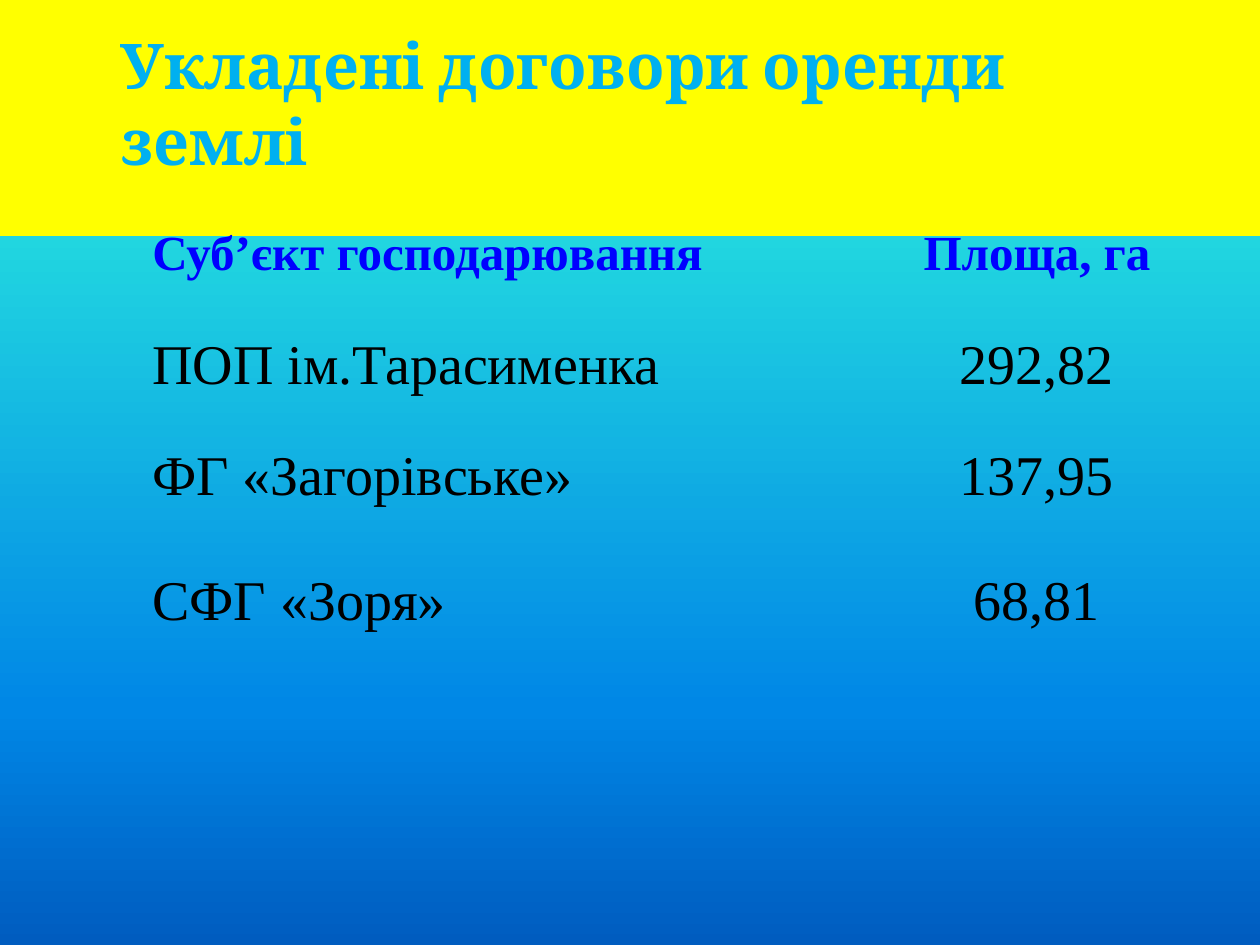
"""Build a slide with a table of signed land leases."""
from lxml import etree
from pptx import Presentation
from pptx import util as u
from pptx.dml.color import RGBColor
from pptx.enum import text
from pptx.oxml import ns

YELLOW = RGBColor(0xFF, 0xFF, 0x00)
AQUA = RGBColor(0x21, 0xD6, 0xE0)
AZURE = RGBColor(0x00, 0x87, 0xE6)
NAVY = RGBColor(0x00, 0x5C, 0xBF)
SKY = RGBColor(0x00, 0xB0, 0xF0)
BLUE = RGBColor(0x00, 0x00, 0xFF)
BLACK = RGBColor(0x00, 0x00, 0x00)

PLAIN = "{2D5ABB26-0587-4C30-8999-92F81FD0307C}"
TITLE = {"name": "Cambria", "size": u.Pt(36), "bold": True}
HEAD = {"name": "Times New Roman", "size": u.Pt(28), "bold": True}
BODY = {"name": "Times New Roman", "size": u.Pt(32), "bold": False}
INSET = {"margin_left": u.Cm(0.1), "margin_right": u.Cm(0.1),
         "margin_top": 0, "margin_bottom": 0}
WIDTHS = (15.04, 5.79)
HEIGHTS = (2.18, 2.24, 2.51, 3.25)
LEASES = (
    ("Суб’єкт господарювання", "Площа, га"),
    ("ПОП ім.Тарасименка", "292,82"),
    ("ФГ «Загорівське»", "137,95"),
    ("СФГ «Зоря»", "68,81"),
)


def apply(thing, style):
    for key, value in style.items():
        setattr(thing, key, value)


class Deck:
    def __init__(self):
        self.show = Presentation()
        self.show.slide_width, self.show.slide_height = u.Cm(25.4), u.Cm(19.05)
        self.slide = self.show.slides.add_slide(self.show.slide_layouts[6])

    def label(self, frame, words, style, color, align=text.PP_ALIGN.LEFT):
        para = frame.paragraphs[0]
        para.alignment = align
        run = para.add_run()
        run.text = words
        apply(run.font, style)
        run.font.color.rgb = color

    def backdrop(self, stops):
        fill = self.slide.background.fill
        fill.gradient()
        fill.gradient_angle = 270
        grad = self.slide.element.find(".//" + ns.qn("a:gsLst"))
        for stop in list(grad):
            grad.remove(stop)
        for place, color in stops:
            stop = etree.SubElement(grad, ns.qn("a:gs"), pos=str(place * 1000))
            etree.SubElement(stop, ns.qn("a:srgbClr"), val=str(color))

    def title(self, words, *box):
        frame = self.slide.shapes.add_textbox(*map(u.Cm, box)).text_frame
        frame.word_wrap = True
        self.label(frame, words, TITLE, SKY)

    def table(self, rows, left, top):
        size = u.Cm(sum(WIDTHS)), u.Cm(sum(HEIGHTS))
        grid = self.slide.shapes.add_table(
            len(rows), len(WIDTHS), u.Cm(left), u.Cm(top), *size).table
        grid.first_row = grid.horz_banding = False
        grid._tbl.tblPr.find(ns.qn("a:tableStyleId")).text = PLAIN
        for col, width in zip(grid.columns, WIDTHS):
            col.width = u.Cm(width)
        for r, (row, height) in enumerate(zip(rows, HEIGHTS)):
            grid.rows[r].height = u.Cm(height)
            style, color = (BODY, BLACK) if r else (HEAD, BLUE)
            for c, words in enumerate(row):
                cell = grid.cell(r, c)
                cell.fill.background()
                apply(cell, INSET)
                align = text.PP_ALIGN.CENTER if c else text.PP_ALIGN.LEFT
                self.label(cell.text_frame, words, style, color, align)


def main():
    deck = Deck()
    deck.backdrop([(25, YELLOW), (25, AQUA), (75, AZURE), (100, NAVY)])
    deck.title("Укладені договори оренди землі", 2.18, 0.41, 20.93, 1.8)
    deck.table(LEASES, 2.97, 4.57)
    deck.show.save("out.pptx")


if __name__ == "__main__":
    main()
